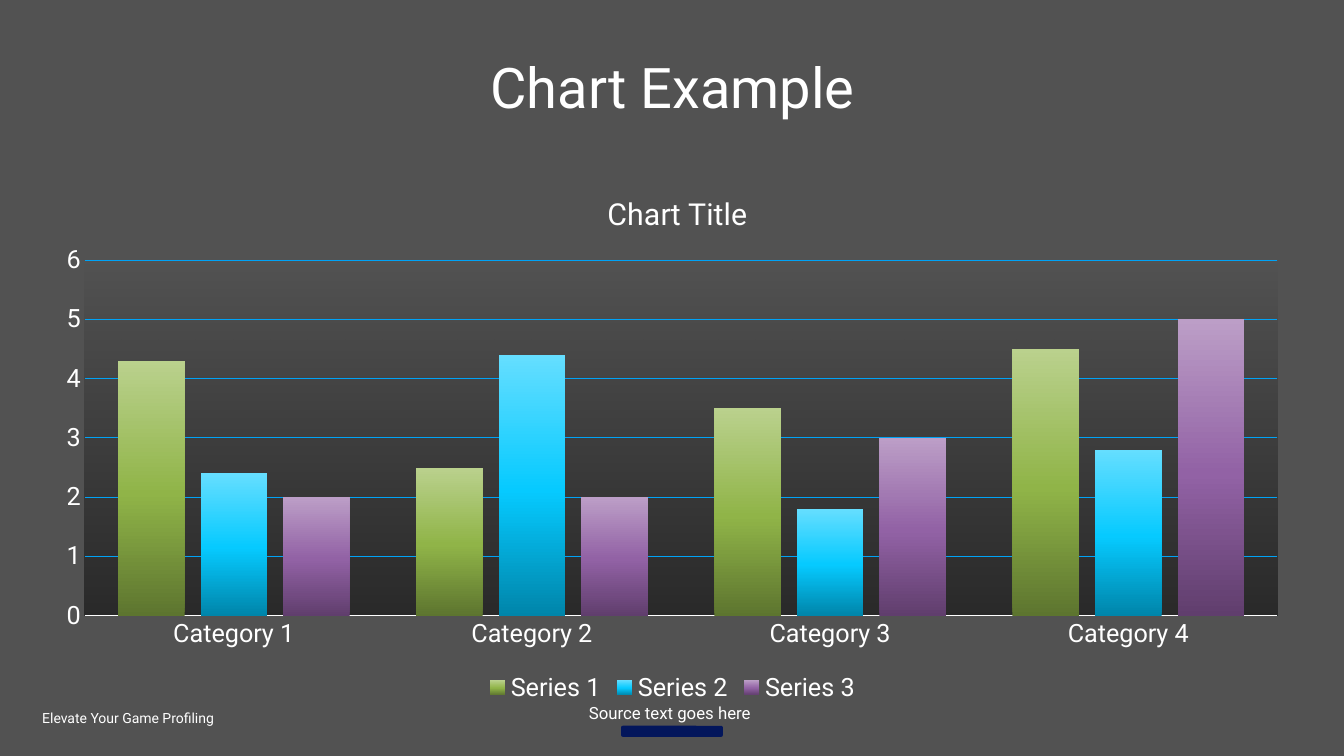
from dataclasses import dataclass

import pptx
import pptx.chart.data
import pptx.dml.color
import pptx.enum.chart
import pptx.enum.shapes
import pptx.enum.text
import pptx.oxml
import pptx.oxml.ns
import pptx.util
from lxml import etree
from pptx.util import Inches


@dataclass(frozen=True)
class Theme:
    """Colours, font and type sizes of the slide."""
    background: str = "525252"
    text: str = "FFFFFF"
    grid: str = "00A3F6"
    accent: str = "03165B"
    shade: str = "000000"
    font: str = "Roboto"
    title: float = 40
    chart_title: float = 21.6
    chart_text: float = 18
    source: float = 12
    footer: float = 10
    rule: float = 0.75


THEME = Theme()
ALIGN = pptx.enum.text.PP_ALIGN
CHART_BOX = (0.42, 1.63, 12.5, 5.39)
CATEGORIES = [f"Category {number}" for number in range(1, 5)]
SERIES = [
    ("Series 1", (4.3, 2.5, 3.5, 4.5), ("5D752F", "90B448", "BAD18D")),
    ("Series 2", (2.4, 4.4, 1.8, 2.8), ("0085AA", "06CAFF", "65DEFF")),
    ("Series 3", (2, 2, 3, 5), ("603E6D", "9262A5", "BC9EC7")),
]


def rgb(colour):
    """Turn a hex string into a colour."""
    return pptx.dml.color.RGBColor.from_string(colour)


def style_font(font, size):
    """Apply the theme's face and text colour at the given size."""
    font.name = THEME.font
    font.size = pptx.util.Pt(size)
    font.bold = False
    font.color.rgb = rgb(THEME.text)


def add_text(slide, box, text, size, align, wrap=False, margin=None):
    """Add one line of text and return its frame."""
    frame = slide.shapes.add_textbox(*map(Inches, box)).text_frame
    frame.word_wrap = wrap
    if margin is not None:
        frame.margin_left = frame.margin_right = Inches(margin)
        frame.margin_top = frame.margin_bottom = Inches(margin)
    if not wrap:
        frame.auto_size = pptx.enum.text.MSO_AUTO_SIZE.SHAPE_TO_FIT_TEXT
    line = frame.paragraphs[0]
    line.text = text
    line.alignment = align
    style_font(line.font, size)
    return frame


def add_bar(slide, box):
    """Add the rounded accent bar."""
    bar = slide.shapes.add_shape(
        pptx.enum.shapes.MSO_SHAPE.ROUNDED_RECTANGLE, *map(Inches, box))
    bar.shadow.inherit = False
    bar.fill.solid()
    bar.fill.fore_color.rgb = rgb(THEME.accent)
    bar.line.fill.background()


def add_gradient(properties, stops):
    """Fill upwards through stops of position, colour and opacity in percent."""
    marks = "".join(
        f'<a:gs pos="{position * 1000}"><a:srgbClr val="{colour}">'
        f'<a:alpha val="{opacity * 1000}"/></a:srgbClr></a:gs>'
        for position, colour, opacity in stops)
    properties.insert(0, pptx.oxml.parse_xml(
        f'<a:gradFill {pptx.oxml.ns.nsdecls("a")} rotWithShape="1">'
        f'<a:gsLst>{marks}</a:gsLst><a:lin ang="16200000" scaled="0"/></a:gradFill>'))


def place(part, left, top, size=None):
    """Give a chart part a fixed place, in inches on the slide."""
    chart_left, chart_top, chart_width, chart_height = CHART_BOX
    values = {"x": (left - chart_left) / chart_width,
              "y": (top - chart_top) / chart_height}
    modes = '<c:xMode val="edge"/><c:yMode val="edge"/>'
    if size:
        values.update(w=size[0] / chart_width, h=size[1] / chart_height)
        modes = '<c:layoutTarget val="inner"/>' + modes
    numbers = "".join(f'<c:{key} val="{value:.4f}"/>' for key, value in values.items())
    layout = pptx.oxml.parse_xml(
        f'<c:layout {pptx.oxml.ns.nsdecls("c")}><c:manualLayout>'
        f'{modes}{numbers}</c:manualLayout></c:layout>')
    automatic = part.find(pptx.oxml.ns.qn("c:layout"))
    if automatic is None:
        part.insert(0, layout)
    else:
        part.replace(automatic, layout)


def style_axes(chart):
    """Set ticks, lines, gridlines and scale."""
    for axis in (chart.category_axis, chart.value_axis):
        axis.major_tick_mark = pptx.enum.chart.XL_TICK_MARK.NONE
        axis.minor_tick_mark = pptx.enum.chart.XL_TICK_MARK.NONE
        style_font(axis.tick_labels.font, THEME.chart_text)
    values = chart.value_axis
    values.minimum_scale, values.maximum_scale, values.major_unit = 0, 6, 1
    values.format.line.fill.background()
    values.has_major_gridlines = True
    for line, colour in ((chart.category_axis.format.line, THEME.text),
                         (values.major_gridlines.format.line, THEME.grid)):
        line.color.rgb = rgb(colour)
        line.width = pptx.util.Pt(THEME.rule)


def add_column_chart(slide):
    """Add the clustered columns with title and legend."""
    table = pptx.chart.data.CategoryChartData()
    table.categories = CATEGORIES
    for name, values, _ in SERIES:
        table.add_series(name, values)
    chart = slide.shapes.add_chart(
        pptx.enum.chart.XL_CHART_TYPE.COLUMN_CLUSTERED,
        *map(Inches, CHART_BOX), table).chart
    style_font(chart.font, THEME.chart_text)

    chart.has_title = True
    heading = chart.chart_title.text_frame.paragraphs[0]
    heading.text = "Chart Title"
    style_font(heading.font, THEME.chart_title)
    chart.chart_title.include_in_layout = False
    place(chart.chart_title._element, 5.97, 1.87)

    chart.has_legend = True
    chart.legend.position = pptx.enum.chart.XL_LEGEND_POSITION.BOTTOM
    chart.legend.include_in_layout = False
    style_font(chart.legend.font, THEME.chart_text)

    style_axes(chart)
    columns = chart.plots[0]
    columns.gap_width = 100
    columns.overlap = -24
    columns.vary_by_categories = False
    for series, (_, _, colours) in zip(columns.series, SERIES):
        stops = [(position, colour, 100)
                 for position, colour in zip((0, 48, 100), colours)]
        add_gradient(series._element.get_or_add_spPr(), stops)

    plot_area = chart._chartSpace.chart.plotArea
    place(plot_area, 0.84, 2.58, (11.83, 3.53))
    backdrop = etree.SubElement(plot_area, pptx.oxml.ns.qn("c:spPr"))
    add_gradient(backdrop, [(0, THEME.shade, 50), (100, THEME.shade, 0)])


def main():
    """Build and save the slide."""
    deck = pptx.Presentation()
    deck.slide_width, deck.slide_height = Inches(13.33), Inches(7.5)
    slide = deck.slides.add_slide(deck.slide_layouts[6])
    slide.background.fill.solid()
    slide.background.fill.fore_color.rgb = rgb(THEME.background)

    add_text(slide, (0.32, 6.99, 1.9, 0.27), "Elevate Your Game Profiling",
             THEME.footer, ALIGN.CENTER)
    add_bar(slide, (6.16, 7.2, 1.01, 0.11))
    title = add_text(slide, (0.42, 0.24, 12.5, 1.31), "Chart Example",
                     THEME.title, ALIGN.CENTER, wrap=True)
    title.vertical_anchor = pptx.enum.text.MSO_ANCHOR.MIDDLE
    title.paragraphs[0].line_spacing = 0.9
    add_column_chart(slide)
    add_text(slide, (5.84, 6.97, 1.65, 0.2), "Source text goes here",
             THEME.source, ALIGN.LEFT, margin=0)
    deck.save("out.pptx")


if __name__ == "__main__":
    main()
